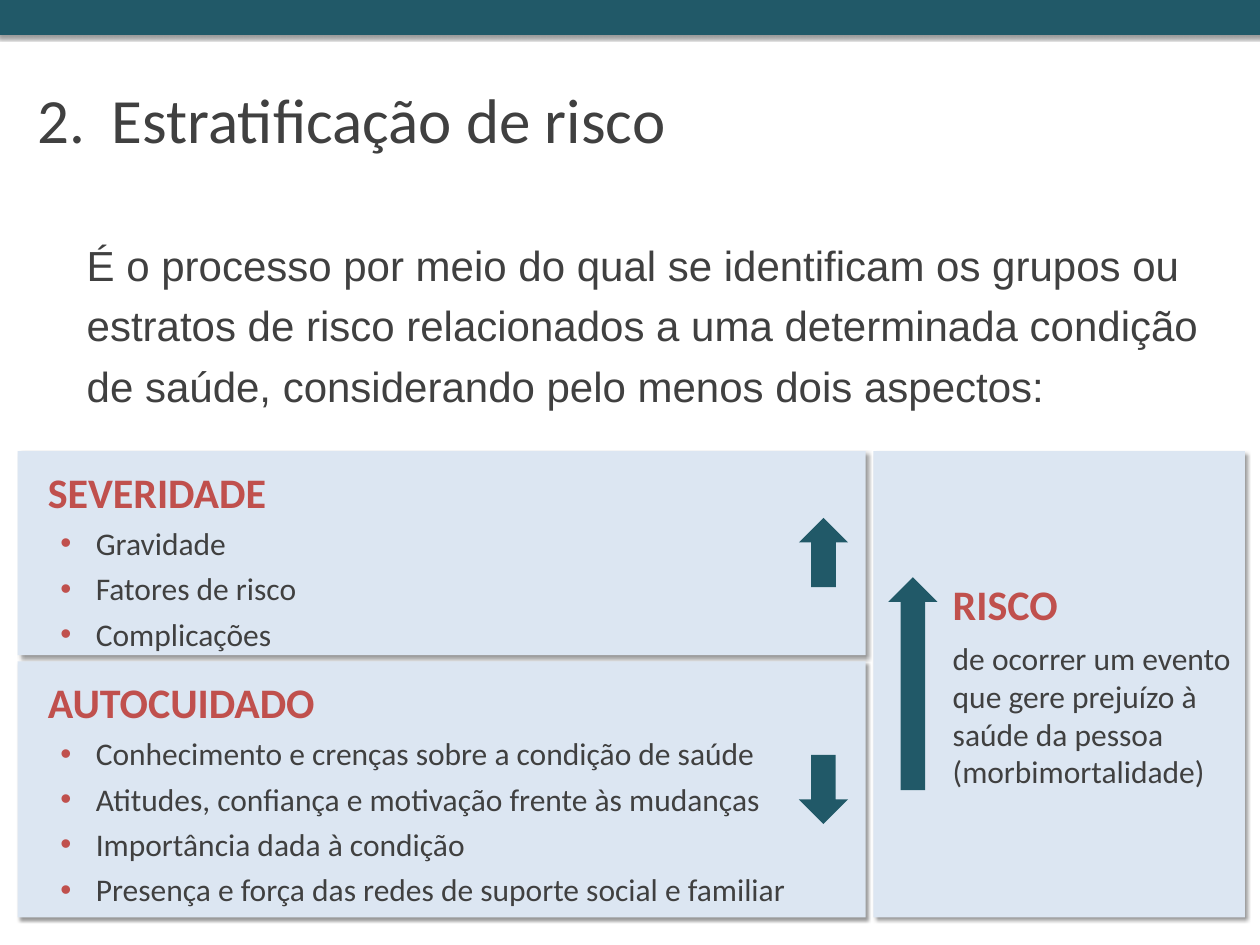
from lxml import etree
from pptx import Presentation
from pptx.dml.color import RGBColor
from pptx.enum import shapes, text
from pptx.oxml import ns
from pptx.util import Pt

TEAL = RGBColor(0x21, 0x59, 0x68)
PALE_BLUE = RGBColor(0xDC, 0xE6, 0xF2)
RED = RGBColor(0xC0, 0x50, 0x4D)
GRAY = RGBColor(0x40, 0x40, 0x40)

presentation = Presentation()
presentation.slide_width = Pt(720)
presentation.slide_height = Pt(540)
slide = presentation.slides.add_slide(presentation.slide_layouts[6])


def add_shape(kind, box, fill, shadow_angle=None):
    shape = slide.shapes.add_shape(kind, *map(Pt, box))
    shape.fill.solid()
    shape.fill.fore_color.rgb = fill
    shape.line.fill.background()
    shape.shadow.inherit = False
    if shadow_angle is not None:
        effects = shape._element.spPr.find(ns.qn("a:effectLst"))
        shadow = etree.SubElement(
            effects, ns.qn("a:outerShdw"), blurRad=str(Pt(2)), dist=str(Pt(2)),
            dir=str(shadow_angle * 60000), algn="tl", rotWithShape="0")
        color = etree.SubElement(shadow, ns.qn("a:srgbClr"), val="000000")
        etree.SubElement(color, ns.qn("a:alpha"), val="40000")
    return shape


def write(frame, content, size=18, color=GRAY, bold=False, font="Calibri",
          line_spacing=None, space_before=0, indent=0, hanging=0,
          bullet=None, start=None):
    paragraph = frame.paragraphs[0]
    if paragraph.runs:
        paragraph = frame.add_paragraph()
    paragraph.alignment = text.PP_ALIGN.LEFT
    paragraph.space_before = Pt(space_before)
    if line_spacing:
        paragraph.line_spacing = line_spacing
    run = paragraph.add_run()
    run.text = content
    run.font.size = Pt(size)
    run.font.name = font
    run.font.bold = bold
    run.font.color.rgb = color
    properties = paragraph._p.get_or_add_pPr()
    properties.set("marL", str(Pt(indent)))
    properties.set("indent", str(Pt(-hanging)))
    if bullet:
        bullet_color = etree.SubElement(properties, ns.qn("a:buClr"))
        etree.SubElement(bullet_color, ns.qn("a:srgbClr"), val=str(RED))
        etree.SubElement(properties, ns.qn("a:buFont"), typeface="Arial")
        etree.SubElement(properties, ns.qn("a:buChar"), char=bullet)
    if start:
        etree.SubElement(properties, ns.qn("a:buAutoNum"),
                         type="arabicPeriod", startAt=str(start))


add_shape(shapes.MSO_SHAPE.RECTANGLE, (-1.5, 0, 723, 20), TEAL, 90)

title = slide.shapes.add_textbox(Pt(14.4), Pt(42.5), Pt(648), Pt(77.8))
title.text_frame.word_wrap = True
write(title.text_frame, "Estratificação de risco", size=36,
      indent=42.5, hanging=42.5, start=2)

definition = slide.shapes.add_textbox(Pt(42.5), Pt(127.5), Pt(671.8), Pt(181.4))
definition.text_frame.word_wrap = True
write(definition.text_frame,
      "É o processo por meio do qual se identificam os grupos ou estratos de "
      "risco relacionados a uma determinada condição de saúde, considerando "
      "pelo menos dois aspectos:", size=24, font="Arial", line_spacing=1.2)

TOP, MIDDLE = text.MSO_ANCHOR.TOP, text.MSO_ANCHOR.MIDDLE
bulleted = dict(line_spacing=1.2, indent=27.4, hanging=20.2, bullet="•")
panels = [
    ((10.1, 257.8, 484.6, 116.6), TOP, (17.3, 8.6, 7.2, 3.6), "SEVERIDADE",
     ["Gravidade", "Fatores de risco", "Complicações"], bulleted),
    ((10.1, 378, 484.6, 146.2), TOP, (17.3, 8.6, 7.2, 3.6), "AUTOCUIDADO",
     ["Conhecimento e crenças sobre a condição de saúde",
      "Atitudes, confiança e motivação frente às mudanças",
      "Importância dada à condição",
      "Presença e força das redes de suporte social e familiar"], bulleted),
    ((499, 257.8, 212.4, 266.4), MIDDLE, (45.4, 3.6, 5.8, 3.6), "RISCO",
     ["de ocorrer um evento que gere prejuízo à saúde da pessoa "
      "(morbimortalidade)"], dict(space_before=6)),
]
for box, anchor, insets, heading, lines, line_format in panels:
    panel = add_shape(shapes.MSO_SHAPE.RECTANGLE, box, PALE_BLUE, 45)
    frame = panel.text_frame
    frame.word_wrap = True
    frame.vertical_anchor = anchor
    (frame.margin_left, frame.margin_top,
     frame.margin_right, frame.margin_bottom) = map(Pt, insets)
    write(frame, heading, size=24, color=RED, bold=True)
    for line in lines:
        write(frame, line, **line_format)

for left, top, height, rotation in [
    (456.5, 295.9, 39.6, 180),
    (456.5, 431.3, 39.6, 0),
    (507.6, 329.8, 121.7, 180),
]:
    arrow = add_shape(shapes.MSO_SHAPE.DOWN_ARROW, (left, top, 28.1, height), TEAL)
    arrow.rotation = rotation

presentation.save("out.pptx")
